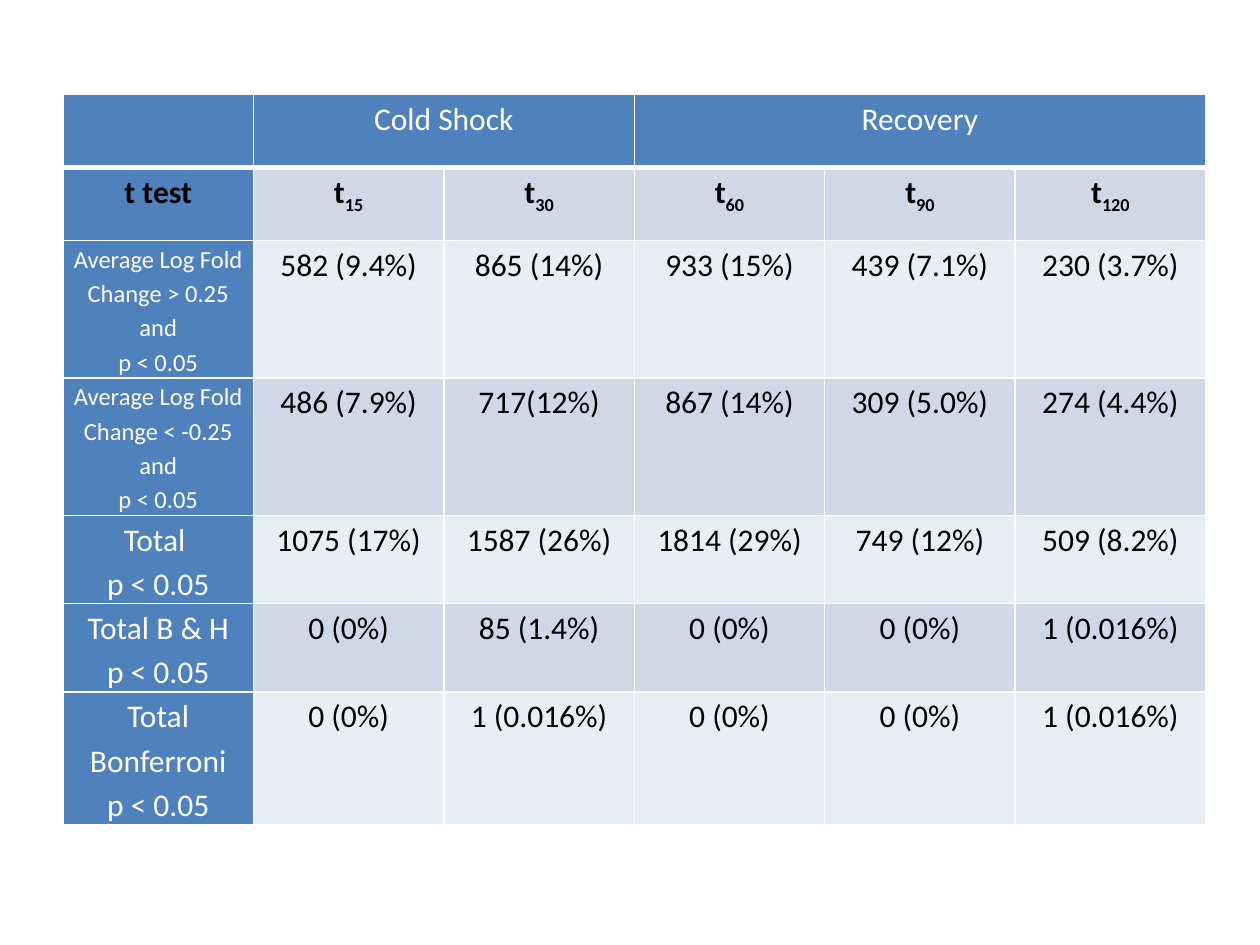
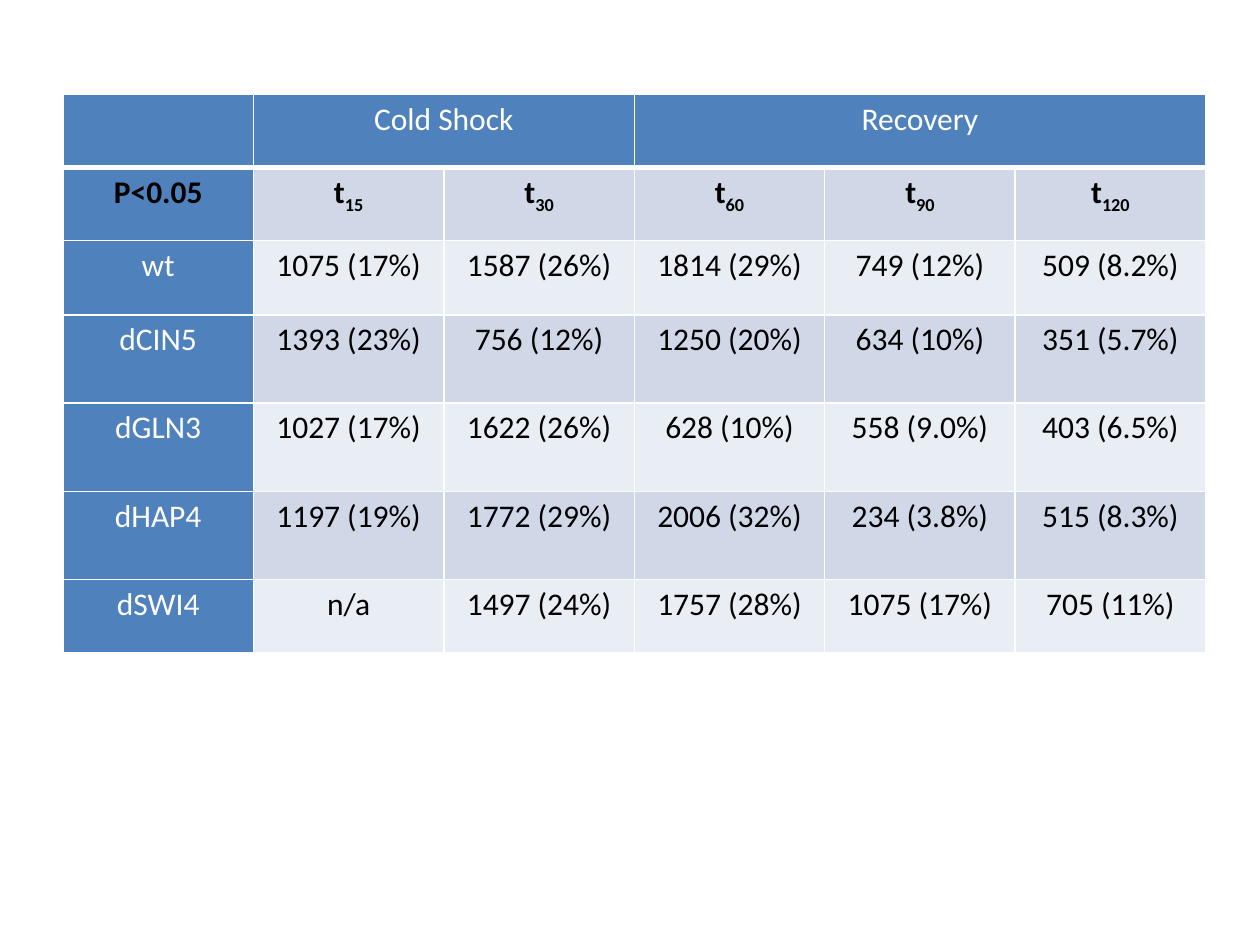
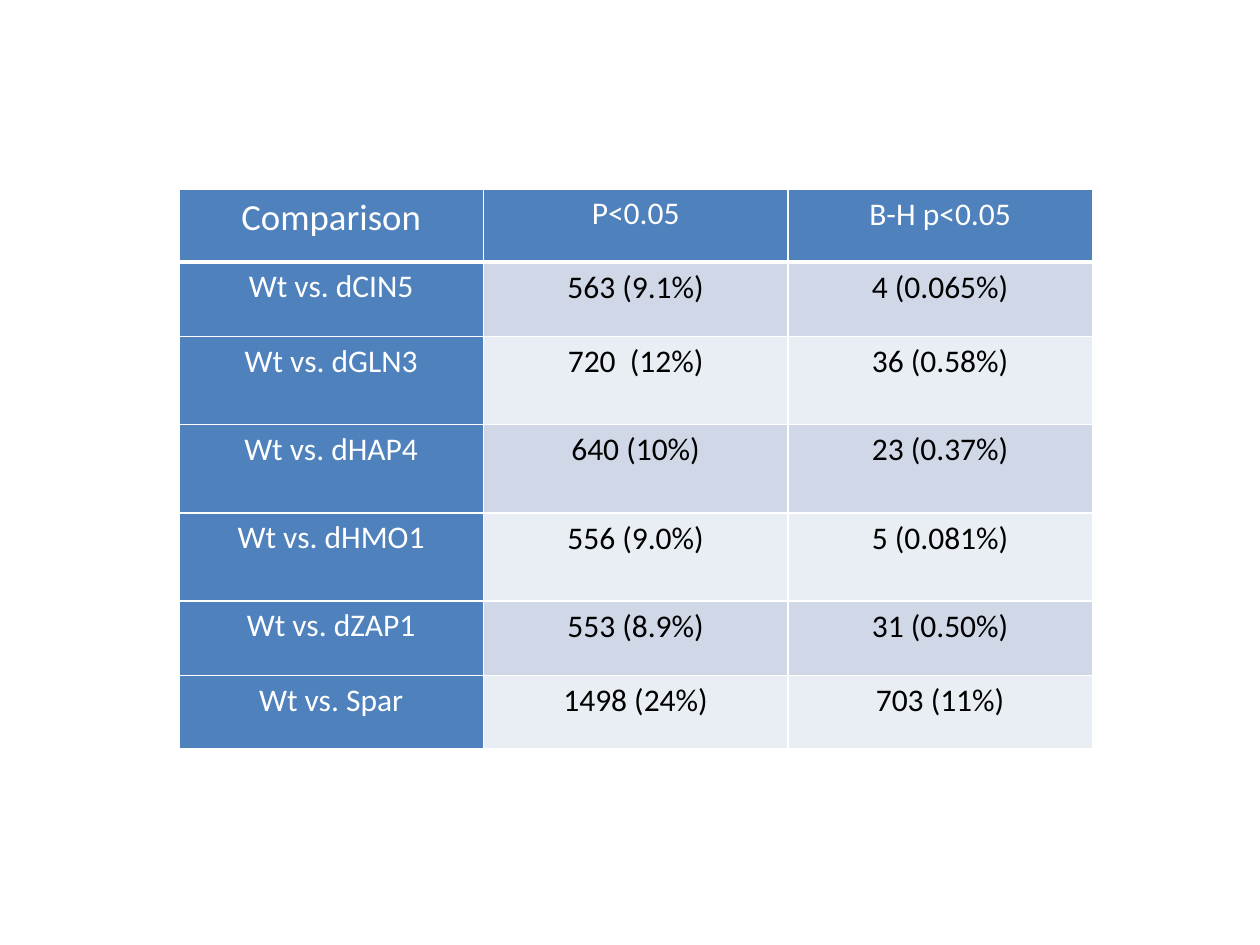
from pptx import Presentation
from pptx.dml.color import RGBColor
from pptx.enum.text import PP_ALIGN
from pptx.oxml.ns import qn
from pptx.util import Inches, Pt
from lxml.etree import SubElement

BLUE = RGBColor(0x4F, 0x81, 0xBD)
DARK_BAND = RGBColor(0xD0, 0xD8, 0xE8)
LIGHT_BAND = RGBColor(0xE9, 0xED, 0xF4)
WHITE = RGBColor(0xFF, 0xFF, 0xFF)
BLACK = RGBColor(0x00, 0x00, 0x00)
FONT = "Calibri"

PHASES = [("Cold Shock", 1, 2), ("Recovery", 3, 5)]
TIMES = ["15", "30", "60", "90", "120"]

# Row label, label size, values per time point
T_TEST_ROWS = [
    ("Average Log Fold Change > 0.25 and\np < 0.05", 14,
     ["582 (9.4%)", "865 (14%)", "933 (15%)", "439 (7.1%)", "230 (3.7%)"]),
    ("Average Log Fold Change < -0.25 and\np < 0.05", 14,
     ["486 (7.9%)", "717(12%)", "867 (14%)", "309 (5.0%)", "274 (4.4%)"]),
    ("Total \np < 0.05", 18,
     ["1075 (17%)", "1587 (26%)", "1814 (29%)", "749 (12%)", "509 (8.2%)"]),
    ("Total B & H\np < 0.05", 18,
     ["0 (0%)", "85 (1.4%)", "0 (0%)", "0 (0%)", "1 (0.016%)"]),
    ("Total Bonferroni\np < 0.05", 18,
     ["0 (0%)", "1 (0.016%)", "0 (0%)", "0 (0%)", "1 (0.016%)"]),
]
STRAIN_ROWS = [
    ("wt", 18, ["1075 (17%)", "1587 (26%)", "1814 (29%)", "749 (12%)", "509 (8.2%)"]),
    ("dCIN5", 18, ["1393 (23%)", "756 (12%)", "1250 (20%)", "634 (10%)", "351 (5.7%)"]),
    ("dGLN3", 18, ["1027 (17%)", "1622 (26%)", "628 (10%)", "558 (9.0%)", "403 (6.5%)"]),
    ("dHAP4", 18, ["1197 (19%)", "1772 (29%)", "2006 (32%)", "234 (3.8%)", "515 (8.3%)"]),
    ("dSWI4", 18, ["n/a", "1497 (24%)", "1757 (28%)", "1075 (17%)", "705 (11%)"]),
]
COMPARISON_ROWS = [
    ("Wt vs. dCIN5", "563 (9.1%)", "4 (0.065%)"),
    ("Wt vs. dGLN3", "720  (12%)", "36 (0.58%)"),
    ("Wt vs. dHAP4", "640 (10%)", "23 (0.37%)"),
    ("Wt vs. dHMO1", "556 (9.0%)", "5 (0.081%)"),
    ("Wt vs. dZAP1", "553 (8.9%)", "31 (0.50%)"),
    ("Wt vs. Spar", "1498 (24%)", "703 (11%)"),
]


def draw_borders(cell, bottom_width):
    properties = cell._tc.get_or_add_tcPr()
    for side in ("L", "R", "T", "B"):
        width = bottom_width if side == "B" else 1
        line = SubElement(properties, qn(f"a:ln{side}"), w=str(Pt(width)))
        fill = SubElement(line, qn("a:solidFill"))
        SubElement(fill, qn("a:srgbClr"), val=str(WHITE))


def add_grid(page, box, columns, row_heights):
    """Add a table with a blue header row, a blue label column and banded rows."""
    left, top, width = box
    frame = page.shapes.add_table(
        len(row_heights), columns, Inches(left), Inches(top),
        Inches(width), Inches(sum(row_heights)))
    table = frame.table
    for column in table.columns:
        column.width = Inches(width / columns)
    for row_index, height in enumerate(row_heights):
        table.rows[row_index].height = Inches(height)
        band = DARK_BAND if row_index % 2 else LIGHT_BAND
        for column_index in range(columns):
            cell = table.cell(row_index, column_index)
            draw_borders(cell, 1 if row_index else 3)
            cell.fill.solid()
            cell.fill.fore_color.rgb = band if row_index and column_index else BLUE
    return table


def format_span(span, size, color, bold):
    span.font.name = FONT
    span.font.size = Pt(size)
    span.font.color.rgb = color
    span.font.bold = bold


def write(cell, text, color=BLACK, size=18, bold=False, subscript="", snug=True):
    """Fill a cell; snug cells have narrow margins and wider line spacing."""
    cell.text_frame.text = text
    if snug:
        cell.margin_left = cell.margin_right = Inches(0.07)
        cell.margin_top = cell.margin_bottom = 0
    if subscript:
        span = cell.text_frame.paragraphs[0].add_run()
        span.text = subscript
        span.font._element.set("baseline", "-25000")
    for para in cell.text_frame.paragraphs:
        para.alignment = PP_ALIGN.CENTER
        if snug:
            para.line_spacing = 1.15
        for span in para.runs:
            format_span(span, size, color, bold)


def build_time_course(page, box, title, rows, row_heights):
    table = add_grid(page, box, len(TIMES) + 1, row_heights)

    # Phase headings over their time points
    for phase, first, last in PHASES:
        table.cell(0, first).merge(table.cell(0, last))
        write(table.cell(0, first), phase, WHITE)

    # Time points
    write(table.cell(1, 0), title, bold=True)
    for column, time in enumerate(TIMES, 1):
        write(table.cell(1, column), "t", bold=True, subscript=time)

    # Gene counts
    for row, (label, size, values) in enumerate(rows, 2):
        write(table.cell(row, 0), label, WHITE, size)
        for column, value in enumerate(values, 1):
            write(table.cell(row, column), value)


def build_comparison(page, box, rows, row_heights):
    table = add_grid(page, box, 3, row_heights)

    # Headings
    write(table.cell(0, 0), "Comparison", WHITE, 21)
    write(table.cell(0, 1), "P<0.05", WHITE)
    write(table.cell(0, 2), "B-H p<0.05", WHITE, snug=False)

    # Strain pairs
    for row, (label, *values) in enumerate(rows, 1):
        write(table.cell(row, 0), label, WHITE)
        for column, value in enumerate(values, 1):
            write(table.cell(row, column), value, snug=False)


def main():
    deck = Presentation()
    deck.slide_width, deck.slide_height = Inches(10), Inches(7.5)
    blank = deck.slide_layouts[6]
    time_box = (0.5, 0.75, 9.07)

    build_time_course(deck.slides.add_slide(blank), time_box, "t test", T_TEST_ROWS,
                      [0.58, 0.58, 1.09, 1.09, 0.7, 0.7, 1.05])
    build_time_course(deck.slides.add_slide(blank), time_box, "P<0.05", STRAIN_ROWS,
                      [0.58, 0.58, 0.59, 0.7, 0.7, 0.7, 0.58])
    build_comparison(deck.slides.add_slide(blank), (1.42, 1.5, 7.25), COMPARISON_ROWS,
                     [0.58, 0.59, 0.7, 0.7, 0.7, 0.59, 0.58])
    deck.save("out.pptx")


if __name__ == "__main__":
    main()
